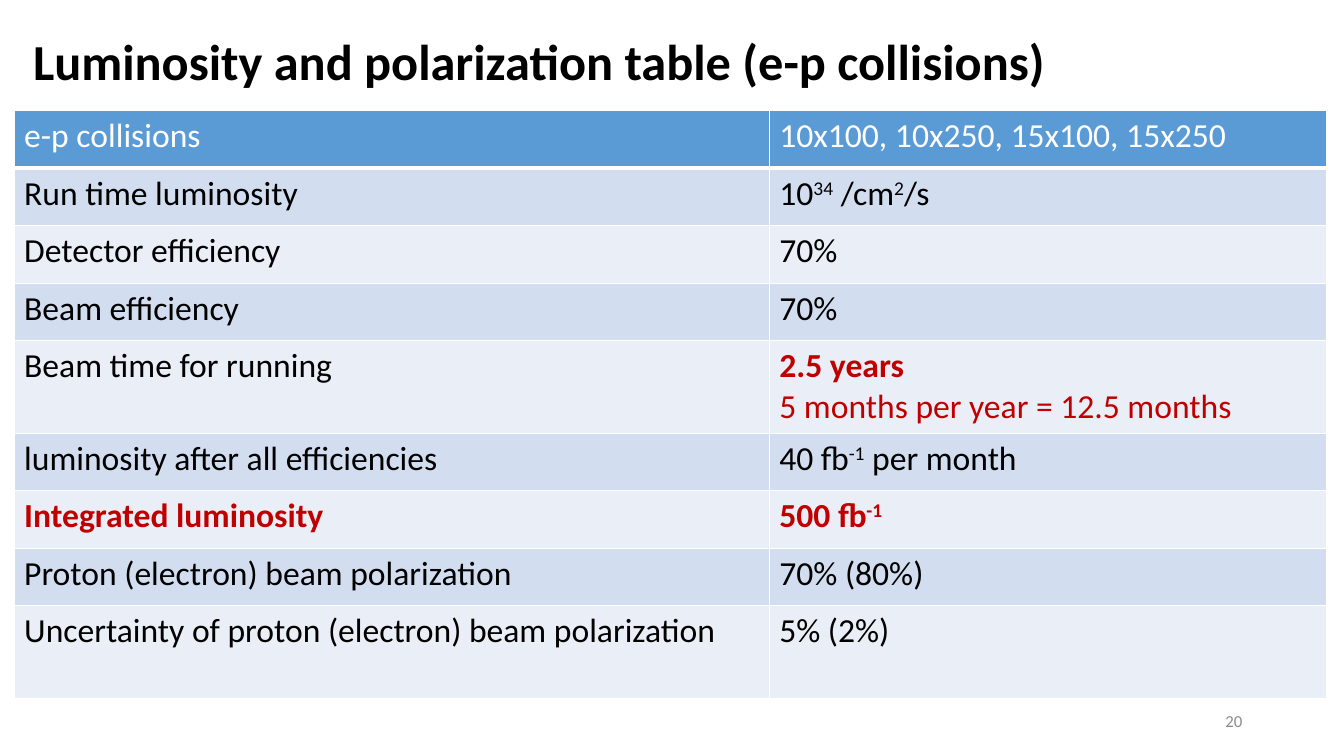
"""Builds the luminosity and polarization table slide."""
from lxml.etree import SubElement
from pptx import Presentation
from pptx.dml.color import RGBColor as RGB
from pptx.enum.text import MSO_ANCHOR as ANCHOR, PP_ALIGN as ALIGN
from pptx.oxml.ns import qn
from pptx.util import Inches, Pt

FONT = "Calibri"
COLORS = {"header": "5B9BD5", "odd": "D2DEEF", "even": "EAEFF7", "white": "FFFFFF",
          "black": "000000", "red": "C00000", "grey": "8C8C8C"}
TITLE = "Luminosity and polarization table (e-p collisions)"
PAGE = "20"
ROWS = [
    ("e-p collisions", "10x100, 10x250, 15x100, 15x250"),
    ("Run time luminosity", "10^34^ /cm^2^/s"),
    ("Detector efficiency", "70%"),
    ("Beam efficiency", "70%"),
    ("Beam time for running", "2.5 years\n5 months per year = 12.5 months"),
    ("luminosity after all efficiencies", "40 fb^-1^ per month"),
    ("Integrated luminosity", "500 fb^-1^"),
    ("Proton (electron) beam polarization", "70% (80%)"),
    ("Uncertainty of proton (electron) beam polarization", "5% (2%)"),
]
RED = {"2.5 years", "5 months per year = 12.5 months", "Integrated luminosity", "500 fb^-1^"}
BOLD = RED - {"5 months per year = 12.5 months"}
COL_WIDTHS = (7.49, 5.53)
ROW_HEIGHT, TALL_HEIGHT = 0.57, 0.92
TALL_ROWS = (4, 8)


def write_line(p, text, size, color, bold=False):
    """Fill a paragraph, raising the parts between carets."""
    for i, part in enumerate(text.split("^")):
        if part:
            r = p.add_run()
            r.text = part
            r.font.name, r.font.size, r.font.bold = FONT, Pt(size), bold
            r.font.color.rgb = RGB.from_string(COLORS[color])
            if i % 2:
                r._r.get_or_add_rPr().set("baseline", "30000")


def add_borders(cell, header):
    """Draw white lines around a cell."""
    tc_pr = cell._tc.get_or_add_tcPr()
    for side in "LRTB":
        width = Pt(3 if header and side == "B" else 1)
        ln = SubElement(tc_pr, qn(f"a:ln{side}"), w=str(width))
        SubElement(SubElement(ln, qn("a:solidFill")), qn("a:srgbClr"), val=COLORS["white"])


def add_label(s, box, text, size, color, bold=False):
    """Add a one-line text box and return its text frame."""
    tf = s.shapes.add_textbox(*map(Inches, box)).text_frame
    write_line(tf.paragraphs[0], text, size, color, bold)
    return tf


def add_table(s):
    """Add the table with banded rows."""
    heights = [TALL_HEIGHT if i in TALL_ROWS else ROW_HEIGHT for i in range(len(ROWS))]
    size = Inches(sum(COL_WIDTHS)), Inches(sum(heights))
    table = s.shapes.add_table(len(ROWS), 2, Inches(0.14), Inches(1.1), *size).table
    for col, width in zip(table.columns, COL_WIDTHS):
        col.width = Inches(width)
    for i, (row, height, texts) in enumerate(zip(table.rows, heights, ROWS)):
        row.height = Inches(height)
        band = "header" if i == 0 else "odd" if i % 2 else "even"
        for cell, text in zip(row.cells, texts):
            add_borders(cell, i == 0)
            cell.fill.solid()
            cell.fill.fore_color.rgb = RGB.from_string(COLORS[band])
            tf = cell.text_frame
            for j, line in enumerate(text.split("\n")):
                p = tf.add_paragraph() if j else tf.paragraphs[0]
                color = "white" if i == 0 else "red" if line in RED else "black"
                write_line(p, line, 24, color, line in BOLD)


def main():
    """Build and save the slide."""
    prs = Presentation()
    prs.slide_width, prs.slide_height = Inches(13.33), Inches(7.5)
    s = prs.slides.add_slide(prs.slide_layouts[6])
    add_table(s)
    tf = add_label(s, (9.42, 6.95, 3, 0.4), PAGE, 12, "grey")
    tf.word_wrap = True
    tf.vertical_anchor = ANCHOR.MIDDLE
    tf.paragraphs[0].alignment = ALIGN.RIGHT
    tf = add_label(s, (0.23, 0.25, 10.36, 0.71), TITLE, 36, "black", True)
    tf.word_wrap = False
    prs.save("out.pptx")


if __name__ == "__main__":
    main()
